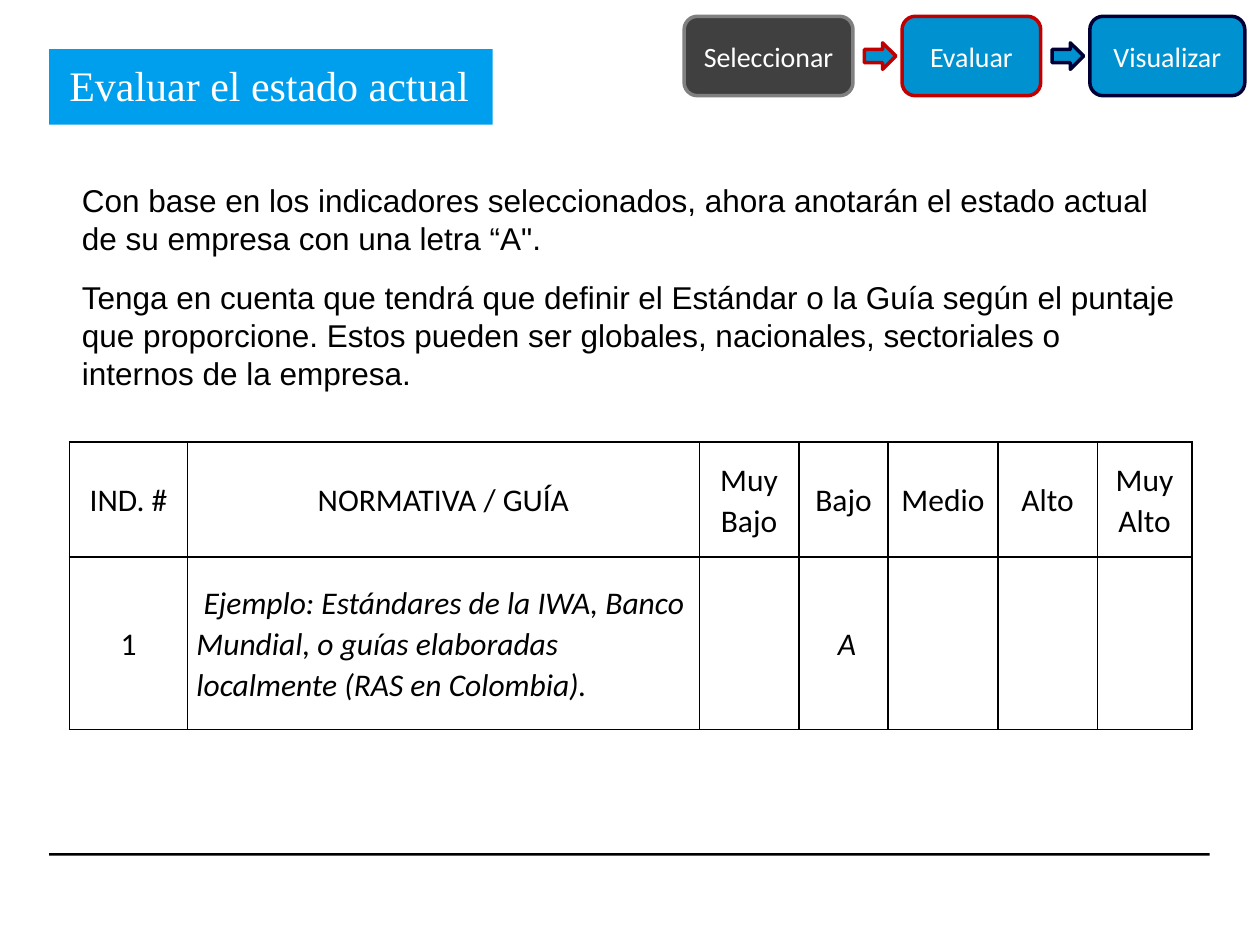
from lxml import etree
from pptx import Presentation
from pptx.dml.color import RGBColor
from pptx.enum.shapes import MSO_SHAPE
from pptx.enum.text import MSO_ANCHOR, MSO_AUTO_SIZE, PP_ALIGN
from pptx.oxml.ns import qn
from pptx.util import Inches, Pt

ROUNDED, ARROW, RECTANGLE = (
    MSO_SHAPE.ROUNDED_RECTANGLE, MSO_SHAPE.RIGHT_ARROW, MSO_SHAPE.RECTANGLE)
TOP, MIDDLE = MSO_ANCHOR.TOP, MSO_ANCHOR.MIDDLE
LEFT, CENTER = PP_ALIGN.LEFT, PP_ALIGN.CENTER
NO_AUTOFIT = MSO_AUTO_SIZE.NONE

BLACK = RGBColor(0x00, 0x00, 0x00)
WHITE = RGBColor(0xFF, 0xFF, 0xFF)
TITLE_BLUE = RGBColor(0x00, 0x9F, 0xEE)
STEP_BLUE = RGBColor(0x00, 0x92, 0xD0)
DARK_GRAY = RGBColor(0x40, 0x40, 0x40)
GRAY = RGBColor(0x80, 0x80, 0x80)
RED = RGBColor(0xC0, 0x00, 0x00)
NAVY = RGBColor(0x00, 0x00, 0x37)


def set_font(font, name, size, color):
    font.name, font.size = name, Pt(size)
    font.color.rgb = color


def add_filled_shape(kind, bounds, fill, line=None):
    """Add a shadowless shape; bounds are left, top, width, height in inches."""
    shape = page.shapes.add_shape(kind, *map(Inches, bounds))
    shape.shadow.inherit = False
    shape.fill.solid()
    shape.fill.fore_color.rgb = fill
    if line is None:
        shape.line.fill.background()
    else:
        shape.line.color.rgb = line
        shape.line.width = Pt(2)
    return shape


deck = Presentation()
deck.slide_width, deck.slide_height = Inches(10), Inches(7.5)
page = deck.slides.add_slide(deck.slide_layouts[1])

# Footer rule
add_filled_shape(RECTANGLE, (0.39, 6.77, 9.21, 0.02), BLACK)

# Title
title = page.shapes.title
title_format = {"left": 0.39, "top": 0.39, "width": 3.52, "height": 0.6}
for name, value in title_format.items():
    setattr(title, name, Inches(value))
title.fill.solid()
title.fill.fore_color.rgb = TITLE_BLUE
frame = title.text_frame
frame.text = "Evaluar el estado actual"
frame_format = {
    "margin_left": Inches(0.16), "margin_top": Inches(0.08),
    "margin_right": Inches(0.16), "margin_bottom": Inches(0.12),
    "word_wrap": False, "auto_size": NO_AUTOFIT, "vertical_anchor": TOP,
}
for name, value in frame_format.items():
    setattr(frame, name, value)
frame.paragraphs[0].alignment = LEFT
set_font(frame.paragraphs[0].font, "Times New Roman", 24, WHITE)

# Instructions
body = page.placeholders[1]
body_format = {"left": 0.55, "top": 1.39, "width": 8.9, "height": 4.95}
for name, value in body_format.items():
    setattr(body, name, Inches(value))
instructions = [
    "Con base en los indicadores seleccionados, ahora anotarán el estado actual "
    "de su empresa con una letra “A\".",
    "Tenga en cuenta que tendrá que definir el Estándar o la Guía según el puntaje "
    "que proporcione. Estos pueden ser globales, nacionales, sectoriales o "
    "internos de la empresa.",
]
body.text_frame.text = "\n".join(instructions)
body.text_frame.auto_size = NO_AUTOFIT
for index, para in enumerate(body.text_frame.paragraphs):
    para.space_before = Pt(6 if index else 0)
    para.space_after = Pt(6)
    properties = para._p.get_or_add_pPr()
    properties.set("marL", "0")
    properties.set("indent", "0")
    etree.SubElement(properties, qn("a:buNone"))
    set_font(para.font, "Arial", 18, BLACK)

# Indicator table
column_widths = [0.94, 4.06, 0.79, 0.71, 0.87, 0.79, 0.75]
row_heights = [0.91, 1.37]
example = ("Ejemplo: Estándares de la IWA, Banco Mundial, "
           "o guías elaboradas localmente (RAS en Colombia).")
rows = [
    ["IND. #", "NORMATIVA / GUÍA", "Muy Bajo", "Bajo", "Medio", "Alto", "Muy Alto"],
    ["1", " " + example, "", " A", "", "", ""],
]
table = page.shapes.add_table(
    len(rows), len(column_widths),
    Inches(0.55), Inches(3.51), Inches(8.9), Inches(2.28)).table
table.first_row = table.horz_banding = False
for column, width in zip(table.columns, column_widths):
    column.width = Inches(width)
for row, height in zip(table.rows, row_heights):
    row.height = Inches(height)

cell_format = {
    "margin_left": Inches(0.07), "margin_right": Inches(0.07),
    "margin_top": 0, "margin_bottom": 0, "vertical_anchor": MIDDLE,
}
for row_index, texts in enumerate(rows):
    for column_index, text in enumerate(texts):
        cell = table.cell(row_index, column_index)
        for name, value in cell_format.items():
            setattr(cell, name, value)
        para = cell.text_frame.paragraphs[0]
        is_example = row_index == 1 and column_index == 1
        para.alignment = LEFT if is_example else CENTER
        para.line_spacing = 1.07
        set_font(para.font, "Calibri", 18, BLACK)
        if text:
            span = para.add_run()
            span.text = text
            set_font(span.font, "Calibri", 18, BLACK)
            span.font.italic = row_index == 1 and column_index > 0
        cell_properties = cell._tc.get_or_add_tcPr()
        for side in ("a:lnL", "a:lnR", "a:lnT", "a:lnB"):
            border = etree.SubElement(cell_properties, qn(side), w=str(Pt(1)))
            solid = etree.SubElement(border, qn("a:solidFill"))
            etree.SubElement(solid, qn("a:srgbClr"), val=str(BLACK))
        cell.fill.background()

# Process steps
steps = [
    ("Seleccionar", 5.43, 1.34, DARK_GRAY, GRAY),
    ("Evaluar", 7.16, 1.1, STEP_BLUE, RED),
    ("Visualizar", 8.65, 1.23, STEP_BLUE, NAVY),
]
for label, left, width, fill, line in steps:
    box = add_filled_shape(ROUNDED, (left, 0.13, width, 0.63), fill, line)
    box.text_frame.text = label
    box.text_frame.vertical_anchor = MIDDLE
    para = box.text_frame.paragraphs[0]
    para.alignment = CENTER
    set_font(para.font, "Calibri", 16, WHITE)

# Each arrow leads into a step and takes its outline colour
for _, left, _, fill, line in steps[1:]:
    add_filled_shape(ARROW, (left - 0.3, 0.34, 0.25, 0.21), fill, line)

deck.save("out.pptx")
